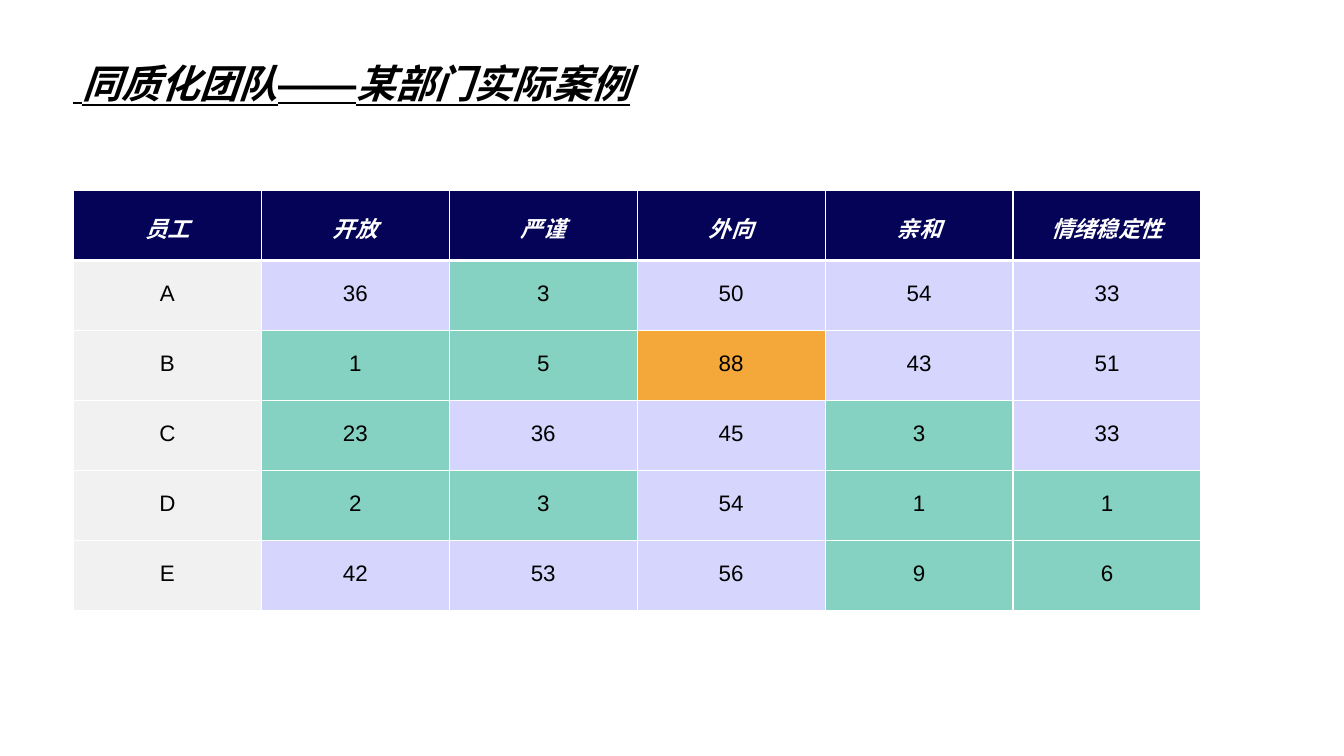
from dataclasses import dataclass

from lxml import etree
from pptx import Presentation
from pptx.dml.color import RGBColor
from pptx.enum.text import MSO_ANCHOR, PP_ALIGN
from pptx.oxml.ns import qn
from pptx.util import Cm, Pt

CENTER = PP_ALIGN.CENTER
TOP = MSO_ANCHOR.TOP

BLACK = RGBColor(0x00, 0x00, 0x00)
WHITE = RGBColor(0xFF, 0xFF, 0xFF)
NAVY = RGBColor(0x04, 0x03, 0x57)
GREY = RGBColor(0xF1, 0xF1, 0xF1)
LILAC = RGBColor(0xD6, 0xD5, 0xFD)
GREEN = RGBColor(0x85, 0xD1, 0xC2)
ORANGE = RGBColor(0xF3, 0xA8, 0x39)

CJK = "Noto Sans CJK SC"
LATIN = "Arial"
LOW, HIGH = 30, 70  # scores outside this band are highlighted


@dataclass
class Piece:
    text: str
    font: str
    bold: bool = True
    italic: bool = True


TITLE = [
    Piece(" ", "Times New Roman", bold=False, italic=False),
    Piece("同质化团队", CJK),
    Piece("——", LATIN, italic=False),
    Piece("某部门实际案例", CJK),
]
HEADERS = ["员工", "开放", "严谨", "外向", "亲和", "情绪稳定性"]
SCORES = {
    "A": [36, 3, 50, 54, 33],
    "B": [1, 5, 88, 43, 51],
    "C": [23, 36, 45, 3, 33],
    "D": [2, 3, 54, 1, 1],
    "E": [42, 53, 56, 9, 6],
}


def add_run(p, piece: Piece, size: int, color: RGBColor, underline: bool = False) -> None:
    r = p.add_run()
    r.text = piece.text
    fmt = {"name": piece.font, "size": Pt(size), "bold": piece.bold,
           "italic": piece.italic, "underline": underline}
    for name, value in fmt.items():
        setattr(r.font, name, value)
    r.font.color.rgb = color
    # East Asian typeface follows the Latin one
    latin = r.font._element.find(qn("a:latin"))
    ea = etree.Element(qn("a:ea"), typeface=piece.font)
    latin.addnext(ea)


def set_borders(cell, widths: dict[str, int]) -> None:
    tc_pr = cell._tc.get_or_add_tcPr()
    for side, width in widths.items():
        ln = etree.SubElement(tc_pr, qn(f"a:ln{side}"), w=str(Pt(width)))
        fill = etree.SubElement(ln, qn("a:solidFill"))
        etree.SubElement(fill, qn("a:srgbClr"), val=str(WHITE))


def fill_cell(cell, piece: Piece, color: RGBColor, fill: RGBColor,
              top: int = 1, bottom: int = 1) -> None:
    margins = {"margin_left": 0, "margin_right": 0, "margin_bottom": 0,
               "margin_top": Cm(0.53), "vertical_anchor": TOP}
    for name, value in margins.items():
        setattr(cell, name, value)
    set_borders(cell, {"L": 1, "R": 1, "T": top, "B": bottom})
    cell.fill.solid()
    cell.fill.fore_color.rgb = fill
    p = cell.text_frame.paragraphs[0]
    p.alignment = CENTER
    p.space_before = Pt(15)
    add_run(p, piece, 16, color)


def score_fill(score: int) -> RGBColor:
    if score < LOW:
        return GREEN
    return ORANGE if score > HIGH else LILAC


def add_title(s) -> None:
    tf = s.shapes.add_textbox(Cm(1.83), Cm(1.47), Cm(30.2), Cm(1.24)).text_frame
    frame = {"word_wrap": True, "vertical_anchor": TOP, "margin_left": 0,
             "margin_right": 0, "margin_top": Cm(0.03), "margin_bottom": 0}
    for name, value in frame.items():
        setattr(tf, name, value)
    for piece in TITLE:
        add_run(tf.paragraphs[0], piece, 28, BLACK, underline=True)


def add_score_table(s) -> None:
    table = s.shapes.add_table(len(SCORES) + 1, len(HEADERS),
                               Cm(1.85), Cm(4.8), Cm(28.42), Cm(10.59)).table
    # Header row
    for col, header in enumerate(HEADERS):
        fill_cell(table.cell(0, col), Piece(header, CJK), WHITE, NAVY, bottom=3)
    # One row per employee
    for row, (employee, scores) in enumerate(SCORES.items(), start=1):
        fills = [GREY] + [score_fill(score) for score in scores]
        for col, (value, fill) in enumerate(zip([employee, *scores], fills)):
            piece = Piece(str(value), LATIN, bold=False, italic=False)
            fill_cell(table.cell(row, col), piece, BLACK, fill, top=3 if row == 1 else 1)


def main() -> None:
    prs = Presentation()
    prs.slide_width, prs.slide_height = Cm(33.87), Cm(19.05)
    s = prs.slides.add_slide(prs.slide_layouts[6])
    add_title(s)
    add_score_table(s)
    prs.save("out.pptx")


if __name__ == "__main__":
    main()
